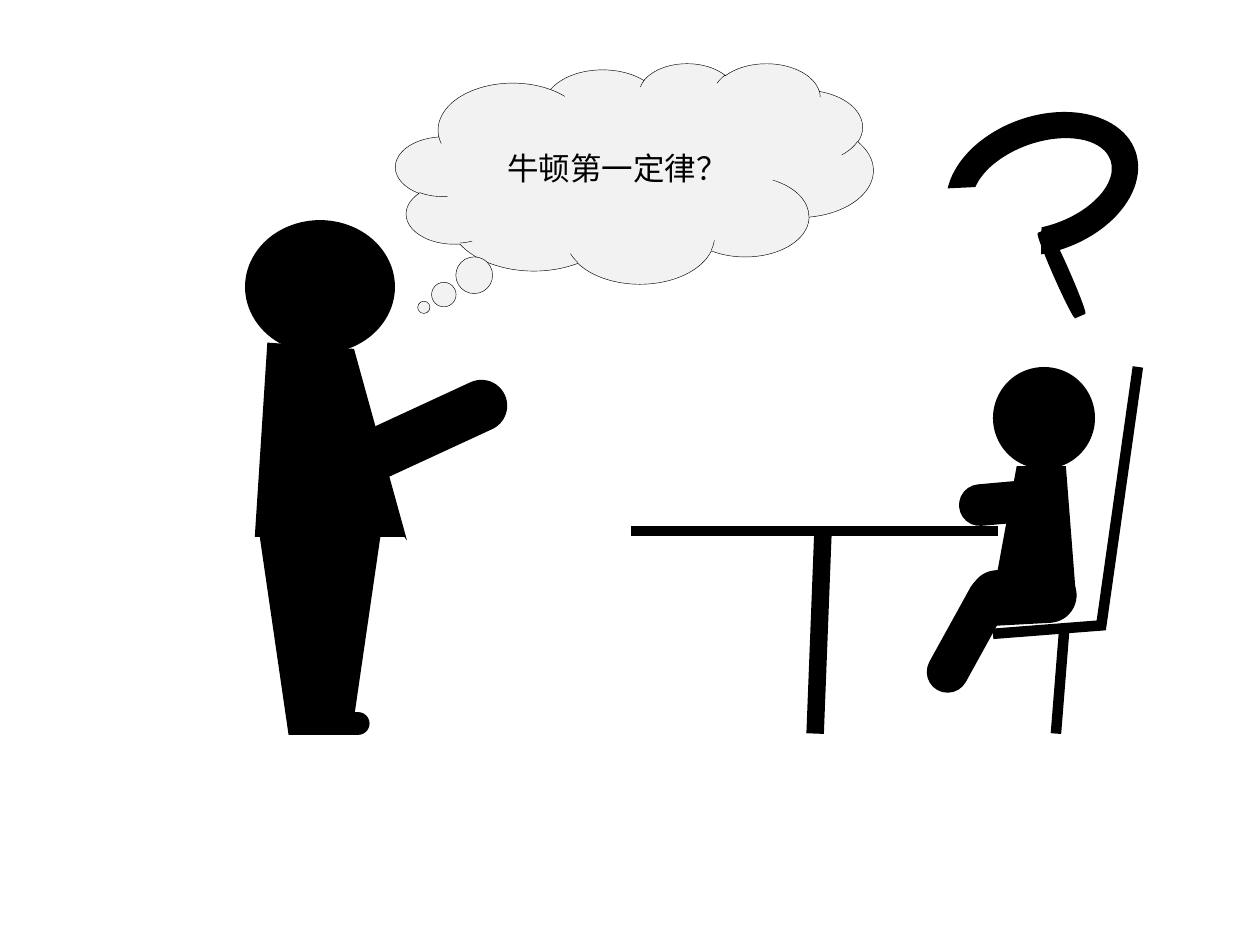
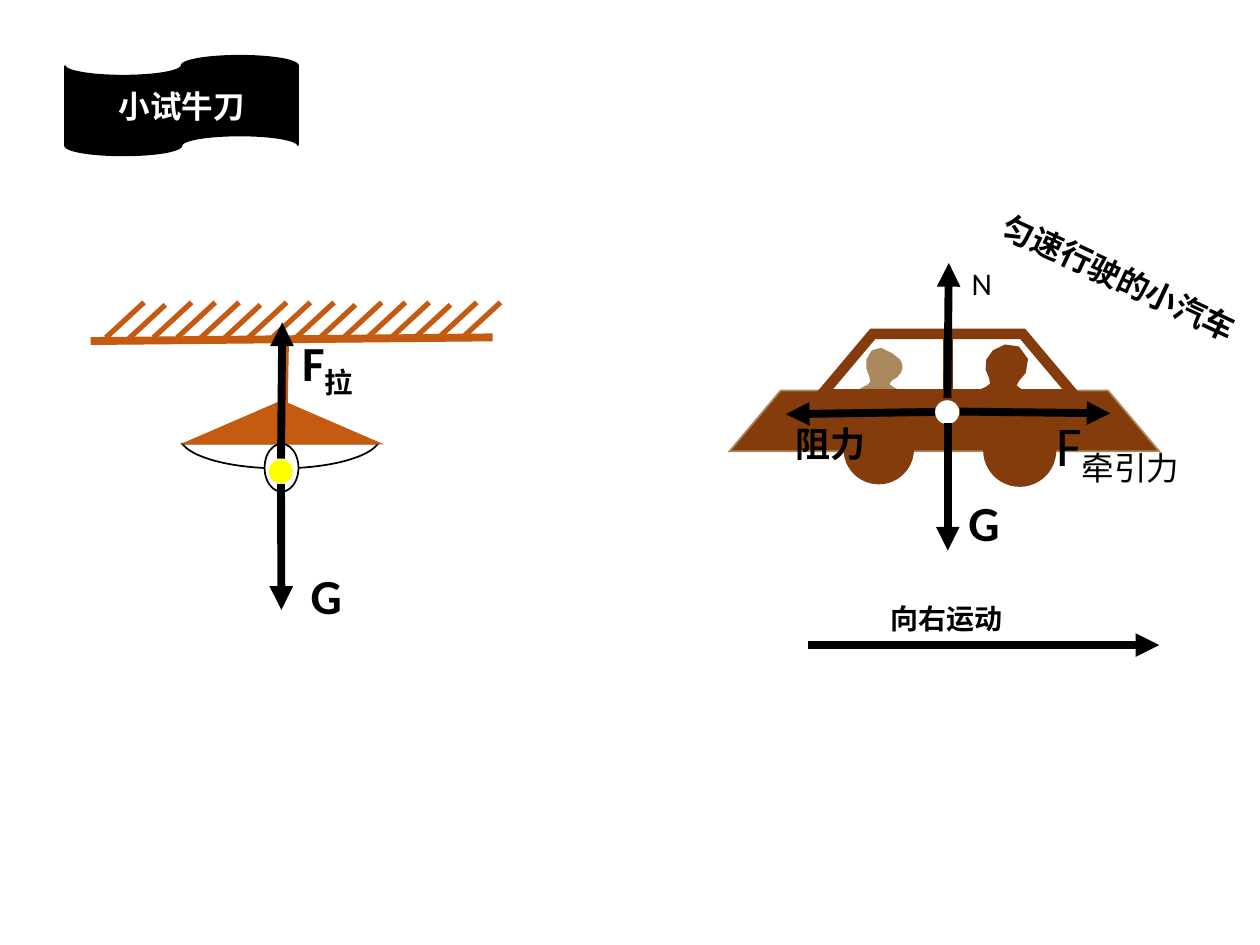
"""Build two physics slides: a classroom scene and two force diagrams."""
import pptx
import pptx.util
import pptx.dml.color
import pptx.enum.shapes
import pptx.enum.text
import pptx.oxml
import pptx.oxml.ns

Pt = pptx.util.Pt
Kind = pptx.enum.shapes.MSO_SHAPE
Align = pptx.enum.text.PP_ALIGN
NS = pptx.oxml.ns.nsdecls("a")
HUES = {
    "ink": "000000", "white": "FFFFFF", "cloud": "F2F2F2", "car": "843C0C",
    "tan": "AA895E", "lamp": "C55A11", "glow": "FFFF00",
}


def paint(shape, fill, line=None, width=1):
    """Set fill and line of a shape, without shadow."""
    shape.shadow.inherit = False
    if fill:
        shape.fill.solid()
        shape.fill.fore_color.rgb = pptx.dml.color.RGBColor.from_string(HUES[fill])
    else:
        shape.fill.background()
    if line:
        shape.line.color.rgb = pptx.dml.color.RGBColor.from_string(HUES[line])
        shape.line.width = Pt(width)
        shape.line._get_or_add_ln().append(
            pptx.oxml.parse_xml(f'<a:miter {NS} lim="800000"/>'))
    else:
        shape.line.fill.background()


def trace(slide, start, steps, close=True):
    """Draw an outline; a step is a point or a cubic curve of six numbers."""
    spots, last = [], start
    for step in steps:
        if len(step) == 2:
            spots.append(step)
        else:
            for t in (0.33, 0.67, 1):
                u = 1 - t
                spots.append([
                    u ** 3 * last[k] + 3 * u * u * t * step[k]
                    + 3 * u * t * t * step[k + 2] + t ** 3 * step[k + 4]
                    for k in (0, 1)
                ])
        last = step[-2:]
    pen = slide.shapes.build_freeform(Pt(start[0]), Pt(start[1]), scale=1.0)
    pen.add_line_segments([(Pt(x), Pt(y)) for x, y in spots], close=close)
    return pen.convert_to_shape()


deck = pptx.Presentation()
deck.slide_width, deck.slide_height = Pt(720), Pt(540)
blank = deck.slide_layouts[6]
scene = deck.slides.add_slide(blank)
force = deck.slides.add_slide(blank)

solids = [
    (scene, "ink", (145.6, 306.9), [
        (152.8, 195.8), (202.3, 199.4), (232.6, 308.9), (231.1, 306.9)]),
    (scene, "ink", (567.4, 340.6), [(581, 266.4), (609.1, 266.4), (614.9, 341.3)]),
    (force, "car", (553.7, 227.5), [
        (553.7, 227.5, 555.8, 223.9, 560.2, 222.5),
        (563, 221, 568.1, 220.3, 565.2, 216),
        (562.3, 211.7, 561.6, 205.2, 567.4, 200.2),
        (573.1, 195.1, 584.6, 194.4, 587.5, 205.2),
        (589, 215.3, 579.6, 218.2, 581, 220.3),
        (581, 221.8, 590.4, 224.6, 592.6, 227.5)]),
    (force, "tan", (487.4, 226.1), [
        (487.4, 226.1, 488.9, 223.2, 493.2, 221),
        (495.4, 220.3, 499, 218.9, 496.8, 215.3),
        (494.6, 211, 493.2, 205.2, 498.2, 200.2),
        (502.6, 195.1, 511.2, 203, 514.1, 205.2),
        (516.2, 207.4, 516.2, 211, 514.8, 213.1),
        (514.1, 216, 507.6, 217.4, 508.3, 219.6),
        (509, 221, 516.2, 223.2, 517.7, 226.1)]),
]
for slide, fill, start, steps in solids:
    paint(trace(slide, start, steps), fill)
chair = trace(scene, (650.2, 209.7), [(629.3, 357.4), (567.4, 362.2)], False)
paint(chair, None, "ink", 6)

pill, oval, trap = Kind.ROUNDED_RECTANGLE, Kind.OVAL, Kind.TRAPEZOID
forms = [
    (scene, oval, (140, 125.8, 85.7, 76.3), 0, [], ("ink",)),
    (scene, trap, (146.9, 296.1, 72, 123.8), 180, [], ("ink",)),
    (scene, pill, (166.6, 406.9, 44.6, 13), 0, [0.5], ("ink",)),
    (scene, pill, (218.2, 190.1, 29.5, 122.4), 245.2, [0.5], ("ink",)),
    (scene, oval, (567.4, 209.7, 58.3, 58.3), 0, [], ("ink",)),
    (scene, pill, (541.4, 326.2, 23.8, 72.7), 28.9, [0.5], ("ink",)),
    (scene, pill, (564.5, 258.7, 23.8, 56.9), 84.9, [0.5], ("ink",)),
    (scene, pill, (568.8, 310.3, 31.7, 61.2), 86.9, [0.5], ("ink",)),
    (scene, Kind.BLOCK_ARC, (556.6, 48.7, 77.8, 113), 70.7,
     [64.017, 12.139, 0.195], ("ink",)),
    (scene, Kind.FLOWCHART_TERMINATOR, (601.9, 129.6, 9.4, 53.3), 336.2, [], ("ink",)),
    (force, trap, (416.9, 223.2, 245.5, 34.6), 0, [0.842], ("car", "tan")),
    (force, oval, (482, 236.5, 40.3, 40.3), 0, [], ("car",)),
    (force, oval, (561.8, 236.4, 41.8, 41.8), 0, [], ("car",)),
    (force, trap, (469.6, 190.8, 144, 34.6), 0, [0.842], (None, "car", 6)),
    (force, Kind.CHORD, (142.1, 192.4, 36, 114.5), 270, [56.304, 159.636], (None, "ink")),
    (force, Kind.ISOSCELES_TRIANGLE, (102.8, 228.7, 116.6, 25.2), 0, [], ("lamp",)),
    (force, oval, (151.2, 253.6, 19.4, 27.4), 0, [], ("white", "ink")),
    (force, oval, (534.4, 228.7, 13.7, 13.7), 0, [], ("white",)),
    (force, oval, (153.6, 262.6, 13.7, 13.7), 0, [], ("glow",)),
    (scene, Kind.CLOUD_CALLOUT, (226.1, 36, 272.9, 126), 0,
     [-0.441, 0.608], ("cloud", "ink", 0.25)),
    (force, Kind.FLOWCHART_PUNCHED_TAPE, (37.1, 31.9, 133.2, 56.9), 0, [], ("ink", "ink")),
]
for slide, kind, box, turn, bends, look in forms:
    form = slide.shapes.add_shape(kind, *[Pt(v) for v in box])
    form.rotation = turn
    for i, bend in enumerate(bends):
        form.adjustments[i] = bend
    paint(form, *look)
cloud, tape = scene.shapes[-1], force.shapes[-1]

lines = [
    (scene, (608.2, 359.3, 603.4, 419.2), "ink", 6, False),
    (scene, (570.2, 303.4, 360.7, 303.4), "ink", 6, False),
    (scene, (470.2, 306, 465.8, 419.2), "ink", 10, False),
    (force, (541.8, 190.8, 541.8, 225.4), "car", 6, False),
    (force, (51.8, 194.9, 281.5, 192.8), "lamp", 4.5, False),
    (force, (162.9, 193.7, 162.2, 231.1), "lamp", 4.5, False),
]
for i in range(16):
    dip = 1.4 if i % 4 == 1 else 0
    x, y = 60.5 + 13.58 * i - dip, 193 + dip
    lines.append((force, (x, y, x + 21.8, y - 20.2), "lamp", 3, False))
arrows = [
    (541.6, 241.9, 541.6, 314.6), (541.4, 227.5, 542.2, 150.3),
    (548.6, 235.2, 634.5, 236.2), (534.2, 235.4, 449.1, 236.7),
    (160.6, 276.5, 160.8, 348.5), (160.6, 262.1, 161.3, 184.3),
    (461.5, 368.6, 662.4, 368.6),
]
lines += [(force, ends, "ink", 4.5, True) for ends in arrows]
for slide, ends, hue, width, tip in lines:
    line = slide.shapes.add_connector(
        pptx.enum.shapes.MSO_CONNECTOR.STRAIGHT, *[Pt(v) for v in ends])
    line.line.color.rgb = pptx.dml.color.RGBColor.from_string(HUES[hue])
    line.line.width = Pt(width)
    if tip:
        line.line._get_or_add_ln().append(
            pptx.oxml.parse_xml(f'<a:tailEnd {NS} type="triangle"/>'))
    line._element.spPr.append(pptx.oxml.parse_xml(f"<a:effectLst {NS}/>"))

texts = [
    (cloud, ["牛顿第一定律？"], 18, False, "ink", "Noto Sans CJK SC"),
    (tape, ["小试牛刀"], 18, True, "white", "Noto Sans CJK JP"),
]
for form in (cloud, tape):
    form.text_frame.vertical_anchor = pptx.enum.text.MSO_ANCHOR.MIDDLE
    form.text_frame.paragraphs[0].alignment = Align.CENTER
labels = [
    ((560.2, 145.7, 165.6, 28.8), 25.1, ["匀速行驶的小汽车"], 18, True),
    ((170.4, 319.7, 28.1, 41), 0, ["G"], 28, True),
    ((165.6, 186.5, 51.8, 41), 0, ["F", "拉"], 28, True),
    ((546.2, 278.2, 28.1, 41), 0, ["G"], 28, True),
    ((548.2, 147.1, 44.6, 28.8), 0, ["N"], 18, False),
    ((596.4, 231.3, 97.9, 46.1), 0, ["F", "牵引力"], 32, False),
    ((447.5, 237.9, 80.6, 31.7), 0, ["阻力"], 20, True),
    ((501.8, 340.1, 89.3, 26.6), 0, ["向右运动"], 16, True),
]
for box, turn, words, size, bold in labels:
    label = force.shapes.add_textbox(*[Pt(v) for v in box])
    label.rotation = turn
    label.text_frame.auto_size = pptx.enum.text.MSO_AUTO_SIZE.SHAPE_TO_FIT_TEXT
    texts.append((label, words, size, bold, "ink", "Calibri"))
for form, words, size, bold, hue, face in texts:
    form.text_frame.word_wrap = True
    for i, word in enumerate(words):
        run = form.text_frame.paragraphs[0].add_run()
        run.text = word
        run.font.size, run.font.bold, run.font.name = Pt(size), bold, face
        run.font.color.rgb = pptx.dml.color.RGBColor.from_string(HUES[hue])
        props = run._r.get_or_add_rPr()
        east = "Noto Sans CJK SC" if face == "Calibri" else face
        props.append(pptx.oxml.parse_xml(f'<a:ea {NS} typeface="{east}"/>'))
        if i:
            props.set("baseline", "-25000")

deck.save("out.pptx")
